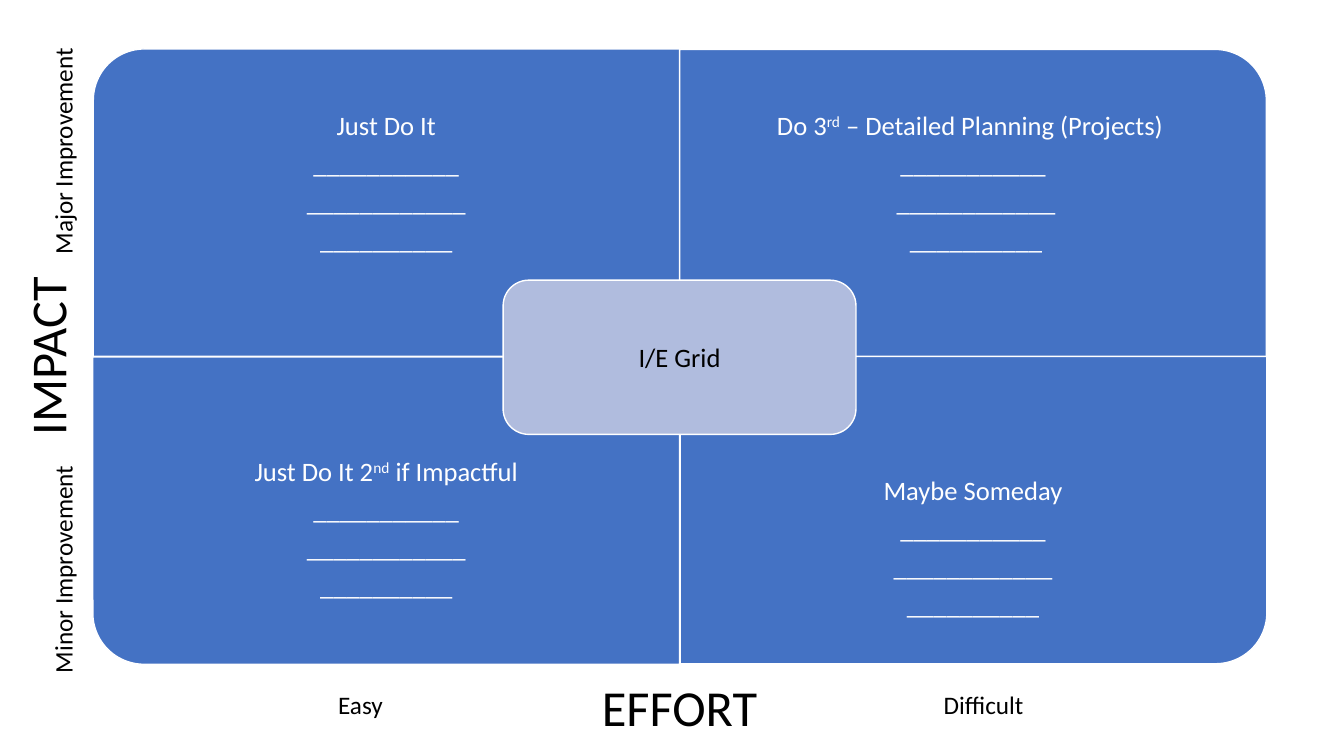
"""Build an impact and effort grid slide."""
import pptx
import pptx.dml.color
import pptx.enum.shapes
import pptx.enum.text
import pptx.util

PX = 9144
LEFT, TOP, QUAD_W, QUAD_H = 92, 49, 582, 305
TEXT_H, LINE_H = 229, 38
BLANKS = ["___________", "____________", "__________"]
INDENTED = [BLANKS[0], " " + BLANKS[1], " " + BLANKS[2]]

# column, row, rotation, heading runs, blanks, top trim, bottom trim
QUADRANTS = [
    (0, 0, 270, ["Just Do It"], BLANKS, LINE_H, 0),
    (1, 0, 0, ["Do 3", "rd", " – Detailed Planning (Projects) "], INDENTED, LINE_H, 0),
    (0, 1, 180, ["Just Do It 2", "nd", " if Impactful"], BLANKS, 0, LINE_H),
    (1, 1, 90, ["Maybe Someday"], BLANKS, 0, 0),
]

# text, centre x, centre y, width, height, size, rotation
AXIS_LABELS = [
    ("IMPACT", 46, 353, 179, 71, 36, 270),
    ("EFFORT", 674, 701, 176, 71, 36, 0),
    ("Easy", 357, 699, 65, 40, 18, 0),
    ("Difficult", 975, 699, 101, 40, 18, 0),
    ("Minor Improvement", 62, 565, 228, 40, 18, 270),
    ("Major Improvement", 62, 150, 228, 40, 18, 270),
]


def px(*lengths):
    return [pptx.util.Emu(n * PX) for n in lengths]


def color(value):
    return pptx.dml.color.RGBColor.from_string(value)


def centered(cx, cy, w, h):
    return px(cx - w // 2, cy - h // 2, w, h)


def add_block(s, kind, box, fill, rotation=0):
    sp = s.shapes.add_shape(kind, *box)
    sp.shadow.inherit = False
    sp.fill.solid()
    sp.fill.fore_color.rgb = color(fill)
    sp.line.color.rgb = color("FFFFFF")
    sp.line.width = pptx.util.Pt(1)
    sp.rotation = rotation
    return sp


def style(p, size, value):
    p.alignment = pptx.enum.text.PP_ALIGN.CENTER
    p.font.name = "Calibri"
    p.font.size = pptx.util.Pt(size)
    p.font.color.rgb = color(value)


def add_quadrant(s, col, row, rotation):
    w, h = (QUAD_H, QUAD_W) if rotation % 180 else (QUAD_W, QUAD_H)
    cx = LEFT + col * QUAD_W + QUAD_W // 2
    cy = TOP + row * QUAD_H + QUAD_H // 2
    kind = pptx.enum.shapes.MSO_SHAPE.ROUND_1_RECTANGLE
    add_block(s, kind, centered(cx, cy, w, h), "4472C4", rotation)


def add_quadrant_text(s, col, row, heading, blanks, trim_top, trim_bottom):
    top = TOP + row * (2 * QUAD_H - TEXT_H) + trim_top
    box = px(LEFT + col * QUAD_W, top, QUAD_W, TEXT_H - trim_top - trim_bottom)
    tf = s.shapes.add_textbox(*box).text_frame
    tf.word_wrap = True
    tf.vertical_anchor = pptx.enum.text.MSO_ANCHOR.MIDDLE
    tf.margin_left, tf.margin_top, tf.margin_right, tf.margin_bottom = px(15, 15, 15, 15)
    for i, runs in enumerate([heading] + [[blank] for blank in blanks]):
        p = tf.paragraphs[0] if i == 0 else tf.add_paragraph()
        style(p, 19, "FFFFFF")
        p.line_spacing = 0.9
        p.space_after = pptx.util.Pt(6.65)
        for j, text in enumerate(runs):
            r = p.add_run()
            r.text = text
            if j == 1:
                r._r.get_or_add_rPr().set("baseline", "30000")


def add_center(s):
    kind = pptx.enum.shapes.MSO_SHAPE.ROUNDED_RECTANGLE
    box = centered(LEFT + QUAD_W, TOP + QUAD_H, 350, 153)
    tf = add_block(s, kind, box, "B0BCDE").text_frame
    tf.text = "I/E Grid"
    tf.vertical_anchor = pptx.enum.text.MSO_ANCHOR.MIDDLE
    style(tf.paragraphs[0], 19, "000000")


def add_axis_label(s, text, cx, cy, w, h, size, rotation):
    sp = s.shapes.add_textbox(*centered(cx, cy, w, h))
    sp.rotation = rotation
    tf = sp.text_frame
    tf.word_wrap = False
    tf.auto_size = pptx.enum.text.MSO_AUTO_SIZE.SHAPE_TO_FIT_TEXT
    tf.text = text
    style(tf.paragraphs[0], size, "000000")


def main():
    prs = pptx.Presentation()
    prs.slide_width, prs.slide_height = px(1333, 750)
    s = prs.slides.add_slide(prs.slide_layouts[6])
    for col, row, rotation, heading, blanks, trim_top, trim_bottom in QUADRANTS:
        add_quadrant(s, col, row, rotation)
        add_quadrant_text(s, col, row, heading, blanks, trim_top, trim_bottom)
    add_center(s)
    for label in AXIS_LABELS:
        add_axis_label(s, *label)
    prs.save("out.pptx")


if __name__ == "__main__":
    main()
